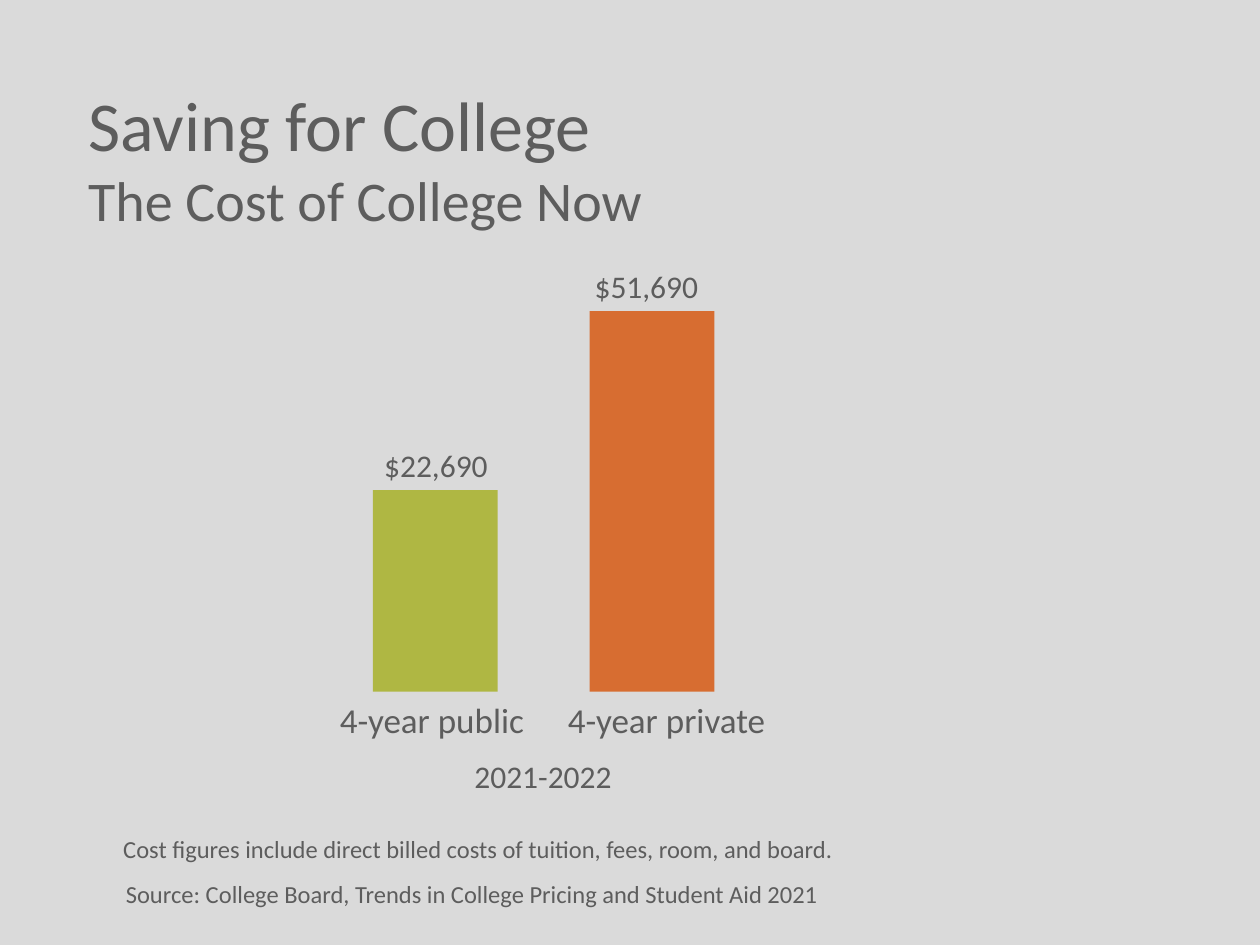
import pptx
import pptx.util
import pptx.dml.color
import pptx.enum.shapes
import pptx.enum.text

Inches = pptx.util.Inches
Pt = pptx.util.Pt
ALIGN = pptx.enum.text.PP_ALIGN
hues = {"back": "DADADA", "text": "5D5D5D", "public": "AFB743", "private": "D76D31"}


def paint(fill, name):
    fill.solid()
    fill.fore_color.rgb = pptx.dml.color.RGBColor.from_string(hues[name])


def write(box, words, sizes, align=ALIGN.LEFT):
    frame = box.text_frame
    frame.word_wrap = True
    frame.auto_size = pptx.enum.text.MSO_AUTO_SIZE.NONE
    frame.text = words
    para = frame.paragraphs[0]
    para.alignment = align
    for run, size in zip(para.runs, sizes):
        run.font.name = "Calibri"
        run.font.size = Pt(size)
        paint(run.font.fill, "text")
    return para


deck = pptx.Presentation()
deck.slide_width, deck.slide_height = Inches(10), Inches(7.5)
slide = deck.slides.add_slide(deck.slide_layouts[5])
paint(slide.background.fill, "back")
shapes = slide.shapes

# Title with a smaller second line
title = shapes.title
title.left, title.top = Inches(0.6), Inches(0.58)
title.width, title.height = Inches(7.99), Inches(1.33)
title.text_frame.vertical_anchor = pptx.enum.text.MSO_ANCHOR.MIDDLE
write(title, "Saving for College\vThe Cost of College Now", [40, 32])

# Bars, each with its cost above and its name below
base, wide = 5.49, 0.99
bars = [
    ("public", 2.96, 1.6, "$22,690", 2.92, "4-year public", 2.6),
    ("private", 4.68, 3.02, "$51,690", 4.59, "4-year private", 4.41),
]
for hue, left, tall, cost, cost_x, name, name_x in bars:
    top = base - tall
    bar = shapes.add_shape(pptx.enum.shapes.MSO_SHAPE.RECTANGLE,
                           Inches(left), Inches(top), Inches(wide), Inches(tall))
    bar.shadow.inherit = False
    paint(bar.fill, hue)
    bar.line.fill.background()

    box = shapes.add_textbox(Inches(cost_x), Inches(top - 0.4), Inches(1.08), Inches(0.4))
    write(box, cost, [18], ALIGN.CENTER)

    box = shapes.add_textbox(Inches(name_x), Inches(5.57), Inches(1.96), Inches(0.36))
    write(box, name, [20]).line_spacing = 0.75

# School year and notes
notes = [
    ("2021-2022", 3.09, 5.96, 2.44, 0.4, 18, ALIGN.CENTER),
    ("Cost figures include direct billed costs of tuition, fees, room, and board.",
     0.88, 6.57, 8.37, 0.34, 14, ALIGN.LEFT),
    ("Source: College Board, Trends in College Pricing and Student Aid 2021",
     0.9, 6.93, 6.08, 0.34, 14, ALIGN.LEFT),
]
for words, left, top, width, height, size, align in notes:
    box = shapes.add_textbox(Inches(left), Inches(top), Inches(width), Inches(height))
    write(box, words, [size], align)

deck.save("out.pptx")
